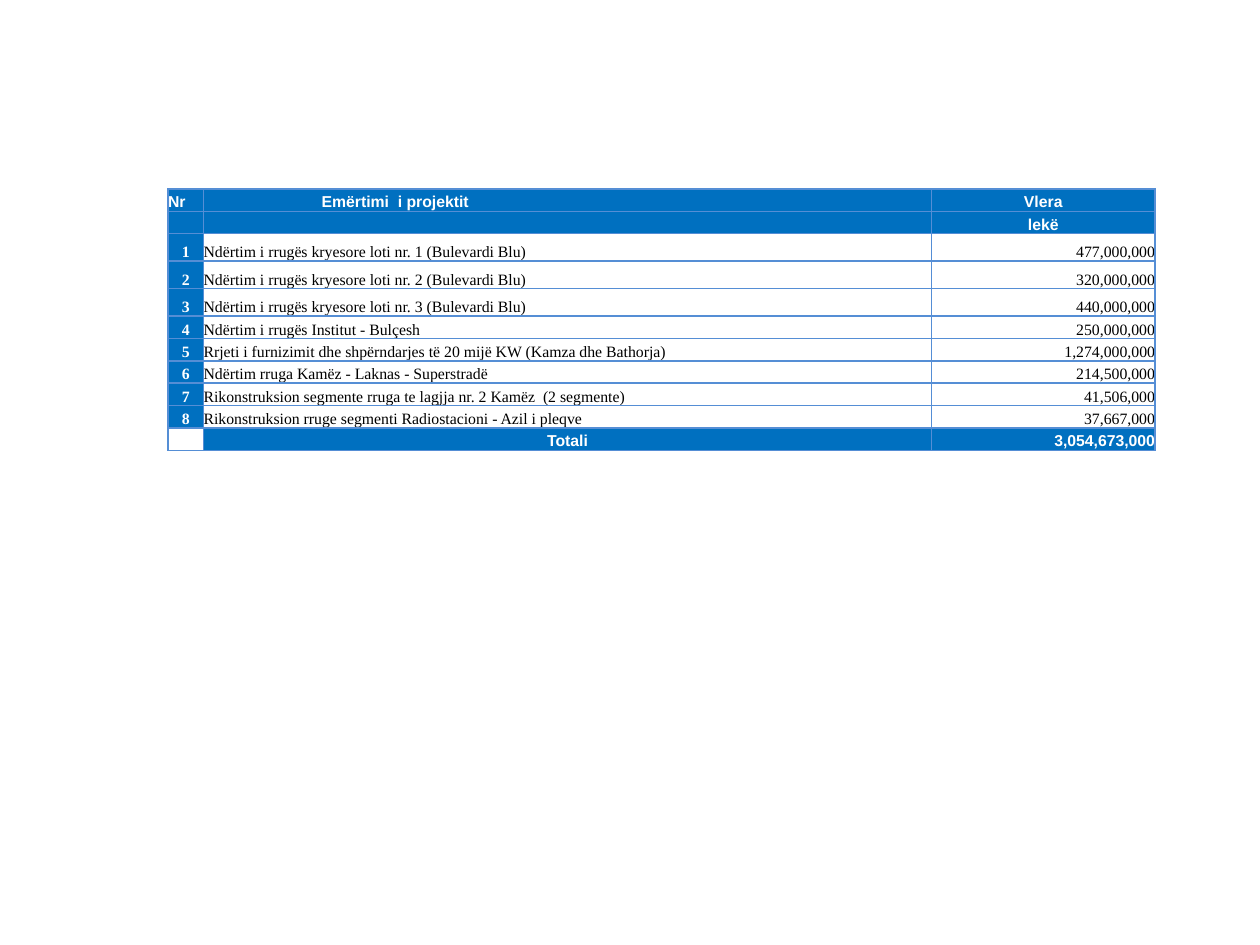
from lxml.etree import SubElement
from pptx import Presentation
from pptx.dml.color import RGBColor
from pptx.enum.text import MSO_ANCHOR, PP_ALIGN
from pptx.oxml.ns import qn
from pptx.util import Pt

PROJECTS = [
    ("Ndërtim i rrugës kryesore loti nr. 1 (Bulevardi Blu)", "477,000,000"),
    ("Ndërtim i rrugës kryesore loti nr. 2 (Bulevardi Blu)", "320,000,000"),
    ("Ndërtim i rrugës kryesore loti nr. 3 (Bulevardi Blu)", "440,000,000"),
    ("Ndërtim i rrugës Institut - Bulçesh", "250,000,000"),
    ("Rrjeti i furnizimit dhe shpërndarjes të 20 mijë KW (Kamza dhe Bathorja)", "1,274,000,000"),
    ("Ndërtim rruga Kamëz - Laknas - Superstradë", "214,500,000"),
    ("Rikonstruksion segmente rruga te lagjja nr. 2 Kamëz  (2 segmente)", "41,506,000"),
    ("Rikonstruksion rruge segmenti Radiostacioni - Azil i pleqve", "37,667,000"),
]
HEADER = [("Nr", "Emërtimi  i projektit", "Vlera"), ("", "", "lekë")]
TOTAL = ("", "Totali", "3,054,673,000")

THEME = {
    "blue": RGBColor(0x00, 0x70, 0xC0),
    "white": RGBColor(0xFF, 0xFF, 0xFF),
    "black": RGBColor(0x00, 0x00, 0x00),
    "border": "558ED5",
    "border_width": Pt(1),
    "size": Pt(9),
    "heading_font": "Arial",
    "body_font": "Times New Roman",
}
LEFT, TOP = 96, 108
COLUMN_WIDTHS = [20.3, 416, 127.7]
ROW_HEIGHT, TALL_ROW_HEIGHT = 12.8, 15.7
TALL_ROWS = range(2, 5)
TITLE_INDENT = 67.5

LEFT_ALIGN, CENTER, RIGHT = PP_ALIGN.LEFT, PP_ALIGN.CENTER, PP_ALIGN.RIGHT
HEADER_ALIGN = (LEFT_ALIGN, LEFT_ALIGN, CENTER)
PROJECT_ALIGN = (CENTER, LEFT_ALIGN, RIGHT)
TOTAL_ALIGN = (CENTER, CENTER, RIGHT)


def set_all(target, values):
    for name, value in values.items():
        setattr(target, name, value)


def draw_borders(cell):
    properties = cell._tc.get_or_add_tcPr()
    for side in ("a:lnL", "a:lnR", "a:lnT", "a:lnB"):
        line = SubElement(properties, qn(side), w=str(THEME["border_width"]))
        fill = SubElement(line, qn("a:solidFill"))
        SubElement(fill, qn("a:srgbClr"), val=THEME["border"])


def fill_cell(cell, text, align, font, filled):
    set_all(cell, {
        "margin_left": 0, "margin_right": 0, "margin_top": 0, "margin_bottom": 0,
        "vertical_anchor": MSO_ANCHOR.BOTTOM,
    })
    draw_borders(cell)
    if filled:
        cell.fill.solid()
        cell.fill.fore_color.rgb = THEME["blue"]
    else:
        cell.fill.background()
    para = cell.text_frame.paragraphs[0]
    para.alignment = align
    if not text:
        para._p.get_or_add_endParaRPr().set("sz", str(int(THEME["size"].pt * 100)))
        return
    span = para.add_run()
    span.text = text
    set_all(span.font, {"name": font, "size": THEME["size"], "bold": filled})
    span.font.color.rgb = THEME["white" if filled else "black"]


def main():
    heading, body = THEME["heading_font"], THEME["body_font"]
    rows = [(texts, HEADER_ALIGN, heading, (True, True, True)) for texts in HEADER]
    rows += [
        ((str(number), *project), PROJECT_ALIGN, body, (True, False, False))
        for number, project in enumerate(PROJECTS, 1)
    ]
    rows.append((TOTAL, TOTAL_ALIGN, heading, (False, True, True)))
    heights = [TALL_ROW_HEIGHT if i in TALL_ROWS else ROW_HEIGHT for i in range(len(rows))]

    deck = Presentation()
    set_all(deck, {"slide_width": Pt(720), "slide_height": Pt(540)})
    page = deck.slides.add_slide(deck.slide_layouts[6])
    table = page.shapes.add_table(
        len(rows), len(COLUMN_WIDTHS), Pt(LEFT), Pt(TOP),
        Pt(sum(COLUMN_WIDTHS)), Pt(sum(heights)),
    ).table
    set_all(table, {"first_row": False, "horz_banding": False})
    for column, width in zip(table.columns, COLUMN_WIDTHS):
        column.width = Pt(width)
    for row, height, (texts, aligns, font, fills) in zip(table.rows, heights, rows):
        row.height = Pt(height)
        for cell, text, align, filled in zip(row.cells, texts, aligns, fills):
            fill_cell(cell, text, align, font, filled)
    table.cell(0, 1).margin_left = Pt(TITLE_INDENT)
    deck.save("out.pptx")


if __name__ == "__main__":
    main()
